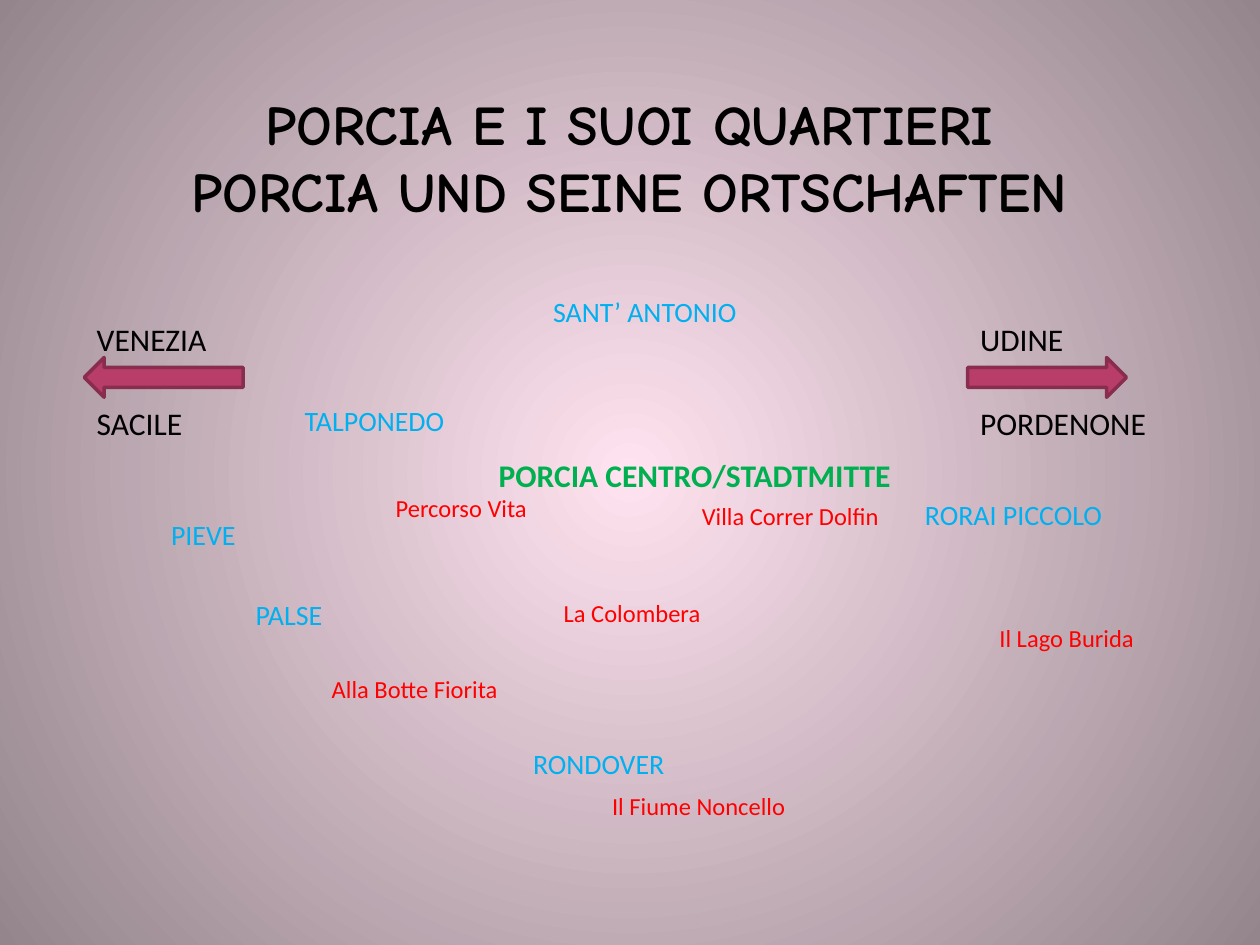
from dataclasses import dataclass

from lxml import etree
from pptx import Presentation
from pptx.dml.color import RGBColor
from pptx.enum.shapes import MSO_SHAPE
from pptx.enum.text import MSO_ANCHOR, MSO_AUTO_SIZE, PP_ALIGN
from pptx.oxml.ns import qn
from pptx.util import Pt

LEFT_ARROW, RIGHT_ARROW = MSO_SHAPE.LEFT_ARROW, MSO_SHAPE.RIGHT_ARROW
MIDDLE, TOP = MSO_ANCHOR.MIDDLE, MSO_ANCHOR.TOP
CENTER = PP_ALIGN.CENTER
FIT_SHAPE, NO_FIT = MSO_AUTO_SIZE.SHAPE_TO_FIT_TEXT, MSO_AUTO_SIZE.NONE


@dataclass(frozen=True)
class Theme:
    title_font: str = "Comic Neue"
    body_font: str = "Calibri"
    black: str = "000000"
    centre: str = "00B050"
    district: str = "00B0F0"
    sight: str = "FF0000"
    arrow_fill: str = "B83D68"
    arrow_line: str = "882D4D"
    glow: str = "FFE3F0"
    edge: str = "94858C"
    title_size: int = 32
    city_size: int = 18
    district_size: int = 16
    sight_size: int = 14


class MapSlide:
    """Holds the theme and the current slide."""

    def __init__(self, slide, theme):
        self.slide, self.theme = slide, theme

    def background(self):
        fill = self.slide.background.fill
        fill.gradient()
        colours = (self.theme.glow, self.theme.edge)
        for stop, position, colour in zip(fill.gradient_stops, (0, 1), colours):
            stop.position = position
            stop.color.rgb = RGBColor.from_string(colour)
        # Radial gradient from the middle of the slide
        gradient = self.slide.element.find(".//" + qn("a:gradFill"))
        gradient.remove(gradient.find(qn("a:lin")))
        circle = etree.SubElement(gradient, qn("a:path"), {"path": "circle"})
        sides = dict.fromkeys("ltrb", "50000")
        etree.SubElement(circle, qn("a:fillToRect"), sides)

    def set_text(self, shape, text, size, colour, font=None, bold=False):
        paragraph = shape.text_frame.paragraphs[0]
        paragraph.text = text
        style = {"name": font or self.theme.body_font,
                 "size": Pt(size), "bold": bold}
        for run in paragraph.runs:
            for attribute, value in style.items():
                setattr(run.font, attribute, value)
            run.font.color.rgb = RGBColor.from_string(colour)
        return paragraph

    def placeholder(self, index, box, text, size, colour, anchor, font=None):
        holder = self.slide.placeholders[index]
        for side, value in zip(("left", "top", "width", "height"), box):
            setattr(holder, side, Pt(value))
        frame = holder.text_frame
        frame.auto_size, frame.vertical_anchor = NO_FIT, anchor
        self.set_text(holder, text, size, colour, font, True).alignment = CENTER

    def label(self, text, left, top, width, size, colour):
        height = round(size * 1.2 + 7.2, 1)
        box = self.slide.shapes.add_textbox(
            Pt(left), Pt(top), Pt(width), Pt(height))
        box.text_frame.word_wrap = True
        box.text_frame.auto_size = FIT_SHAPE
        self.set_text(box, text, size, colour)

    def arrow(self, kind, left, top):
        arrow = self.slide.shapes.add_shape(
            kind, Pt(left), Pt(top), Pt(90.7), Pt(22.7))
        arrow.shadow.inherit = False
        arrow.fill.solid()
        arrow.fill.fore_color.rgb = RGBColor.from_string(self.theme.arrow_fill)
        arrow.line.color.rgb = RGBColor.from_string(self.theme.arrow_line)
        arrow.line.width = Pt(2)


def main():
    theme = Theme()
    deck = Presentation()
    deck.slide_width, deck.slide_height = Pt(720), Pt(540)
    page = MapSlide(deck.slides.add_slide(deck.slide_layouts[0]), theme)
    page.background()

    # Title and town centre
    page.placeholder(0, (54, 31.5, 612, 116),
                     "PORCIA E I SUOI QUARTIERI\vPORCIA UND SEINE ORTSCHAFTEN",
                     theme.title_size, theme.black, MIDDLE, theme.title_font)
    page.placeholder(1, (241, 257, 312, 36), "PORCIA CENTRO/STADTMITTE",
                     theme.city_size, theme.centre, TOP)

    # Directions: a city above and below each arrow
    directions = (
        (LEFT_ARROW, 48.2, "VENEZIA", "SACILE"),
        (RIGHT_ARROW, 553, "UDINE", "PORDENONE"),
    )
    for kind, left, upper_city, lower_city in directions:
        page.arrow(kind, left, 204.3)
        for city, top in ((upper_city, 179.5), (lower_city, 227.5)):
            page.label(city, left, top, 115, theme.city_size, theme.black)

    # Districts
    districts = (
        ("SANT’ ANTONIO", 309, 165, 164),
        ("TALPONEDO", 167, 227.3, 130),
        ("PIEVE", 90.7, 292, 139),
        ("PALSE", 139, 337.7, 130),
        ("RONDOVER", 297.5, 423, 142),
        ("RORAI PICCOLO", 521.5, 281, 153),
    )
    for name, left, top, width in districts:
        page.label(name, left, top, width, theme.district_size, theme.district)

    # Sights
    sights = (
        ("Percorso Vita", 219, 278, 193),
        ("Alla Botte Fiorita", 182.5, 381.5, 160),
        ("Il Fiume Noncello", 342.7, 448.3, 153),
        ("Il Lago Burida", 564, 352.5, 148),
        ("Villa Correr Dolfin", 394, 283, 130),
        ("La Colombera", 315, 338, 135),
    )
    for name, left, top, width in sights:
        page.label(name, left, top, width, theme.sight_size, theme.sight)

    deck.save("out.pptx")


if __name__ == "__main__":
    main()
